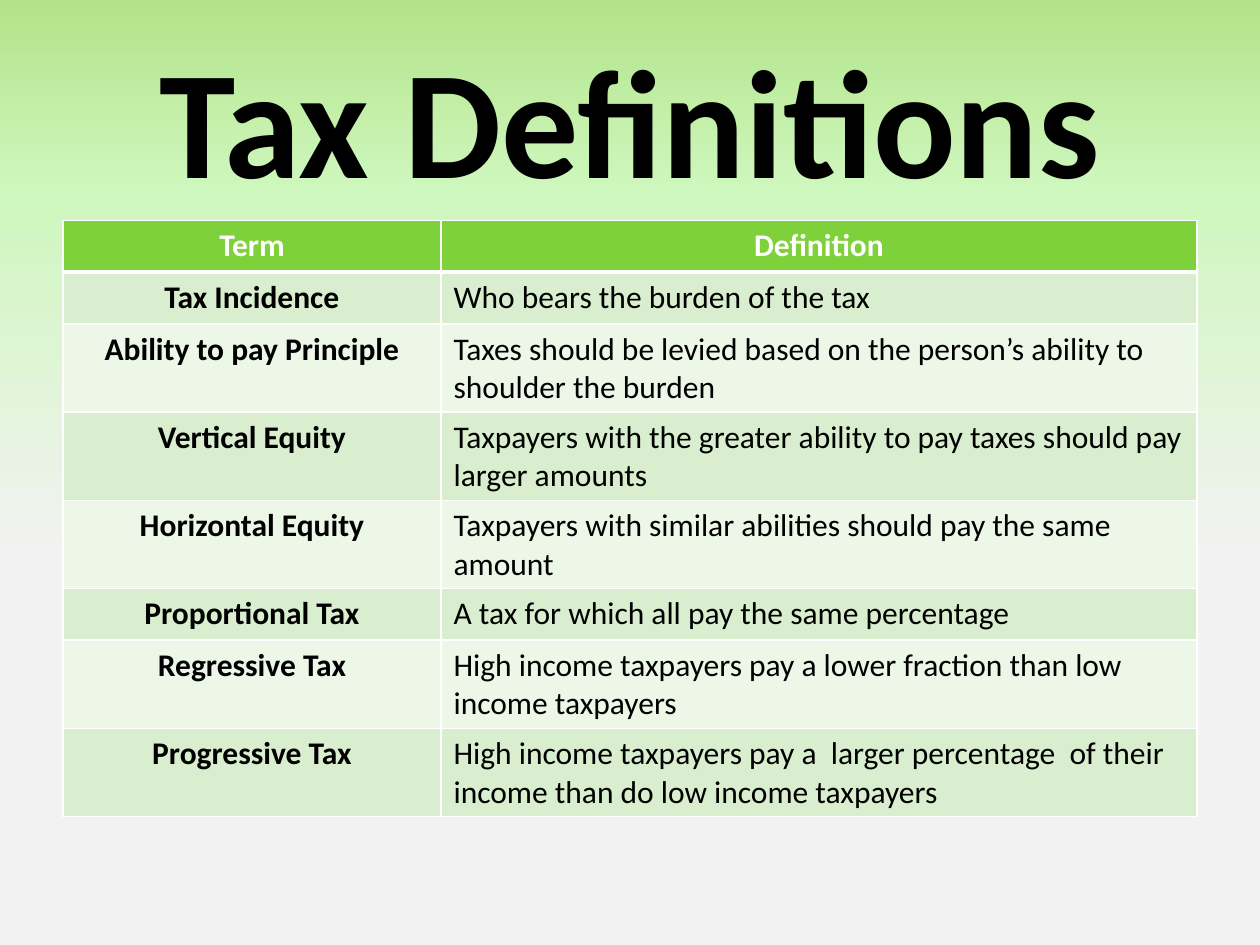
from copy import deepcopy
from typing import NamedTuple

from lxml import etree
from pptx import Presentation
from pptx.dml.color import RGBColor
from pptx.enum.text import MSO_ANCHOR, PP_ALIGN
from pptx.oxml.ns import qn
from pptx.util import Inches, Pt

CENTER, LEFT = PP_ALIGN.CENTER, PP_ALIGN.LEFT
MIDDLE = MSO_ANCHOR.MIDDLE

BLACK = RGBColor(0x00, 0x00, 0x00)
WHITE = RGBColor(0xFF, 0xFF, 0xFF)
HEADER_GREEN = RGBColor(0x7F, 0xD1, 0x3B)
BAND_DARK = RGBColor(0xD8, 0xEE, 0xCE)
BAND_LIGHT = RGBColor(0xEC, 0xF7, 0xE8)
FONT = "Calibri"
ROW_HEIGHT = 0.41
COLUMN_WIDTHS = (3, 6)


class GradientStop(NamedTuple):
    position: float
    color: RGBColor


class Entry(NamedTuple):
    term: str
    definition: str


BACKDROP = [
    GradientStop(0, RGBColor(0xB2, 0xE3, 0x89)),
    GradientStop(0.2, RGBColor(0xCE, 0xF7, 0xBD)),
    GradientStop(0.59, RGBColor(0xF2, 0xF2, 0xF2)),
]

HEADER = Entry("Term", "Definition")
ENTRIES = [
    Entry("Tax Incidence", "Who bears the burden of the tax"),
    Entry("Ability to pay Principle",
          "Taxes should be levied based on the person’s ability to shoulder the burden"),
    Entry("Vertical Equity",
          "Taxpayers with the greater ability to pay taxes should pay larger amounts"),
    Entry("Horizontal Equity",
          "Taxpayers with similar abilities should pay the same amount"),
    Entry("Proportional Tax", "A tax for which all pay the same percentage"),
    Entry("Regressive Tax",
          "High income taxpayers pay a lower fraction than low income taxpayers"),
    Entry("Progressive Tax",
          "High income taxpayers pay a  larger percentage  of their income than do low income taxpayers"),
]


def paint_background(slide, stops: list[GradientStop]) -> None:
    fill = slide.background.fill
    fill.gradient()
    fill.gradient_angle = 270
    stop_list = slide.element.find(".//" + qn("a:gsLst"))
    stop_list.append(deepcopy(stop_list[-1]))
    for drawn, stop in zip(fill.gradient_stops, stops):
        drawn.position = stop.position
        drawn.color.rgb = stop.color


def write(frame, text: str, size: float, color: RGBColor, bold: bool, align) -> None:
    frame.text = text
    paragraph = frame.paragraphs[0]
    paragraph.alignment = align
    font = paragraph.font
    font.name, font.size, font.bold = FONT, Pt(size), bold
    font.color.rgb = color


def add_border(cell, side: str, width: float) -> None:
    properties = cell._tc.get_or_add_tcPr()
    line = etree.SubElement(properties, qn(f"a:ln{side}"), w=str(Pt(width)))
    solid = etree.SubElement(line, qn("a:solidFill"))
    etree.SubElement(solid, qn("a:srgbClr"), val=str(WHITE))


def fill_row(cells, entry: Entry, background: RGBColor, is_header: bool,
             top: float, bottom: float) -> None:
    color = WHITE if is_header else BLACK
    for column, (cell, text) in enumerate(zip(cells, entry)):
        emphasized = is_header or column == 0
        write(cell.text_frame, text, 18, color, emphasized,
              CENTER if emphasized else LEFT)
        for side, width in (("L", 1), ("R", 1), ("T", top), ("B", bottom)):
            add_border(cell, side, width)
        cell.fill.solid()
        cell.fill.fore_color.rgb = background


def add_definitions(slide) -> None:
    rows = [HEADER, *ENTRIES]
    table = slide.shapes.add_table(
        len(rows), len(COLUMN_WIDTHS), Inches(0.5), Inches(1.75),
        Inches(sum(COLUMN_WIDTHS)), Inches(ROW_HEIGHT * len(rows))).table
    for column, width in zip(table.columns, COLUMN_WIDTHS):
        column.width = Inches(width)
    for index, (row, entry) in enumerate(zip(table.rows, rows)):
        row.height = Inches(ROW_HEIGHT)
        is_header = index == 0
        band = BAND_DARK if index % 2 else BAND_LIGHT
        fill_row(row.cells, entry, HEADER_GREEN if is_header else band, is_header,
                 top=3 if index == 1 else 1, bottom=3 if is_header else 1)


def add_title(slide) -> None:
    title = slide.shapes.add_textbox(Inches(0.5), Inches(0.3), Inches(9), Inches(1.25))
    frame = title.text_frame
    frame.word_wrap = True
    frame.vertical_anchor = MIDDLE
    write(frame, "Tax Definitions", 88, BLACK, True, CENTER)


def main() -> None:
    presentation = Presentation()
    presentation.slide_width, presentation.slide_height = Inches(10), Inches(7.5)
    slide = presentation.slides.add_slide(presentation.slide_layouts[6])
    paint_background(slide, BACKDROP)
    add_title(slide)
    add_definitions(slide)
    presentation.save("out.pptx")


if __name__ == "__main__":
    main()
